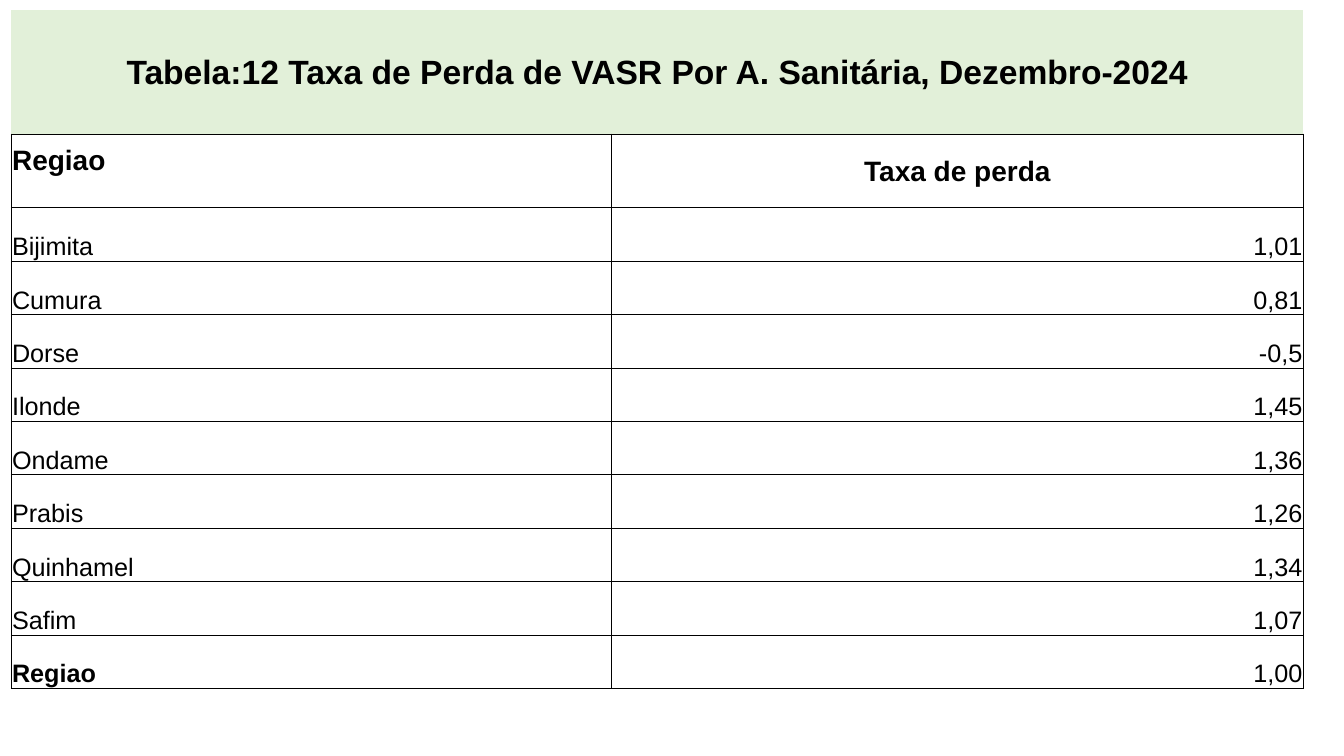
from lxml import etree
from pptx import Presentation
from pptx.dml.color import RGBColor
from pptx.enum.text import MSO_ANCHOR, PP_ALIGN
from pptx.oxml.ns import qn
from pptx.util import Pt

LEFT, MID, RIGHT = PP_ALIGN.LEFT, PP_ALIGN.CENTER, PP_ALIGN.RIGHT
CENTER, BOTTOM = MSO_ANCHOR.MIDDLE, MSO_ANCHOR.BOTTOM
COLORS = {"ink": "000000", "band": "E2F0D9", "paper": "FFFFFF"}
FONT = "Arial"
TITLE = "Tabela:12 Taxa de Perda de VASR Por A. Sanitária, Dezembro-2024"
HEADS = ("Regiao", "Taxa de perda")
RATES = [
    ("Bijimita", "1,01"),
    ("Cumura", "0,81"),
    ("Dorse", "-0,5"),
    ("Ilonde", "1,45"),
    ("Ondame", "1,36"),
    ("Prabis", "1,26"),
    ("Quinhamel", "1,34"),
    ("Safim", "1,07"),
    ("Regiao", "1,00"),
]


def set_edges(cell, drawn):
    """Rule the sides named in drawn and clear the others."""
    props = cell._tc.get_or_add_tcPr()
    for spot, side in enumerate("LRTB"):
        line = etree.Element(qn(f"a:ln{side}"), w=str(Pt(0.5)))
        if side in drawn:
            fill = etree.SubElement(line, qn("a:solidFill"))
            etree.SubElement(fill, qn("a:srgbClr"), val=COLORS["ink"])
        else:
            etree.SubElement(line, qn("a:noFill"))
        props.insert(spot, line)


def fill_cell(cell, text, size, align, anchor=BOTTOM, bold=False,
              color="paper", edges="LRTB", foot=0):
    cell.margin_left = cell.margin_right = cell.margin_top = Pt(0.7)
    cell.margin_bottom = Pt(foot)
    cell.vertical_anchor = anchor
    cell.fill.solid()
    cell.fill.fore_color.rgb = RGBColor.from_string(COLORS[color])
    set_edges(cell, edges)
    para = cell.text_frame.paragraphs[0]
    para.alignment = align
    run = para.add_run()
    run.text = text
    run.font.name = FONT
    run.font.size = Pt(size)
    run.font.bold = bold
    run.font.color.rgb = RGBColor.from_string(COLORS["ink"])


def add_rates(slide, left, top, width, height):
    count = len(RATES) + 2
    frame = slide.shapes.add_table(count, 2, Pt(left), Pt(top), Pt(width), Pt(height))
    table = frame.table
    first = 429
    table.columns[0].width = Pt(first)
    table.columns[1].width = Pt(width - first)

    # Row heights: title, heads, then equal data rows
    tall = [88.5, 52.6]
    tall += [(height - sum(tall)) / len(RATES)] * len(RATES)
    for row, size in zip(table.rows, tall):
        row.height = Pt(size)

    # Title band across both columns
    band = table.cell(0, 0)
    band.merge(table.cell(0, 1))
    fill_cell(band, TITLE, 24, MID, CENTER, True, "band", "B")
    set_edges(table.cell(0, 1), "B")

    # Column heads; the first sits one line above the row's foot
    fill_cell(table.cell(1, 0), HEADS[0], 20, LEFT, bold=True, foot=22.5)
    fill_cell(table.cell(1, 1), HEADS[1], 20, MID, CENTER, True)

    # Data rows, with the total's name in bold
    for row, (area, rate) in enumerate(RATES, 2):
        fill_cell(table.cell(row, 0), area, 18, LEFT, bold=row == count - 1)
        fill_cell(table.cell(row, 1), rate, 18, RIGHT)


def main():
    deck = Presentation()
    deck.slide_width, deck.slide_height = Pt(960), Pt(540)
    slide = deck.slides.add_slide(deck.slide_layouts[6])
    add_rates(slide, 7.9, 7.2, 923, 484.5)
    deck.save("out.pptx")


if __name__ == "__main__":
    main()
